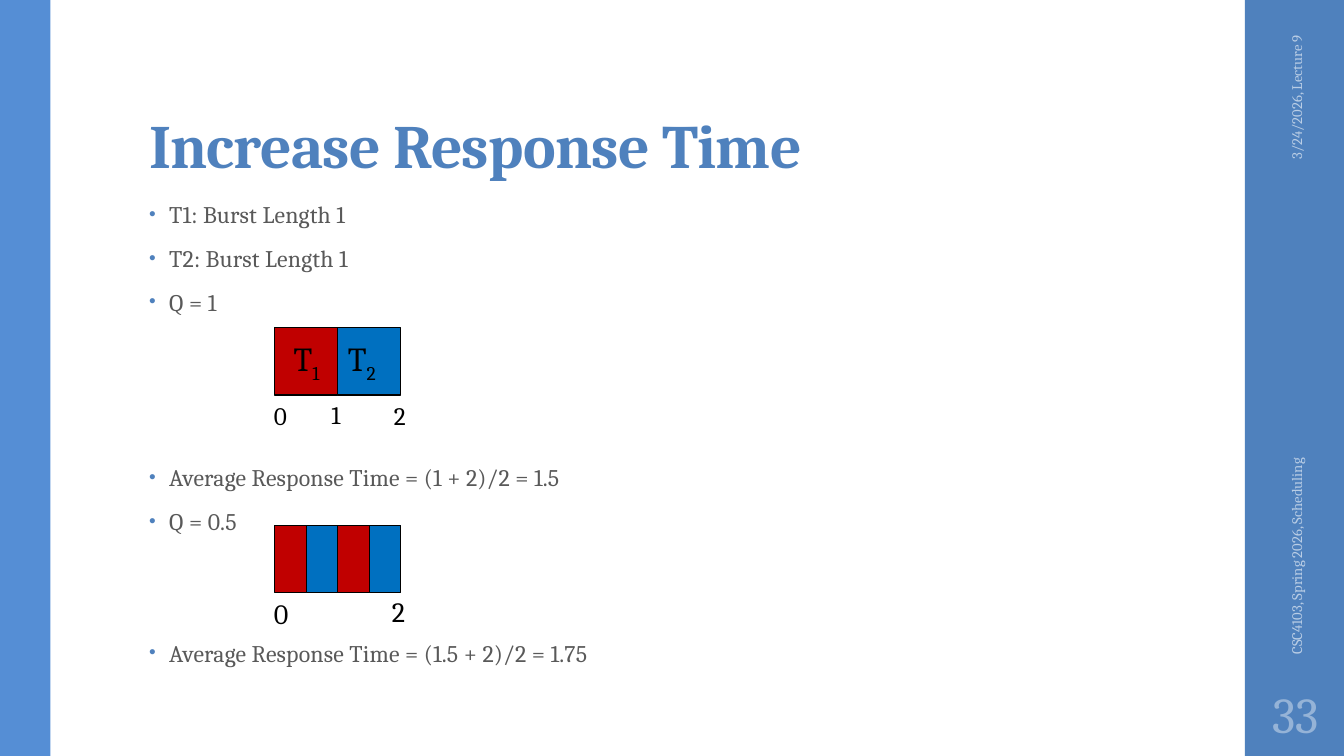
from lxml.etree import SubElement
from pptx import Presentation
from pptx.dml.color import RGBColor
from pptx.enum.shapes import MSO_SHAPE
from pptx.enum.text import MSO_ANCHOR, PP_ALIGN
from pptx.oxml.ns import qn
from pptx.util import Pt

COLORS = {
    "accent": "4F81BD", "stripe": "558ED5", "body": "595959", "footer": "B9CDE5",
    "number": "95B3D7", "red": "C00000", "blue": "0070C0", "black": "000000",
}
FONT = "Cambria"


def color(name):
    return RGBColor.from_string(COLORS[name])


def add_run(paragraph, text, size, color_name, bold=False, spacing=None, baseline=None):
    run = paragraph.add_run()
    run.text = text
    run.font.name = FONT
    run.font.size = Pt(size)
    run.font.bold = bold
    run.font.color.rgb = color(color_name)
    properties = run._r.get_or_add_rPr()
    if spacing is not None:
        properties.set("spc", str(round(spacing * 100)))
    if baseline is not None:
        properties.set("baseline", str(baseline * 1000))


def add_rectangle(shapes, box, fill, line=None):
    shape = shapes.add_shape(MSO_SHAPE.RECTANGLE, *map(Pt, box))
    shape.shadow.inherit = False
    shape.fill.solid()
    shape.fill.fore_color.rgb = color(fill)
    if line:
        shape.line.color.rgb = color(line)
        shape.line.width = Pt(0.75)
    else:
        shape.line.fill.background()
    return shape


def add_text_box(shapes, box, anchor=MSO_ANCHOR.MIDDLE, wrap=True):
    shape = shapes.add_textbox(*map(Pt, box))
    shape.text_frame.word_wrap = wrap
    shape.text_frame.vertical_anchor = anchor
    return shape


def add_bullet(paragraph):
    properties = paragraph._p.get_or_add_pPr()
    properties.set("marL", str(Pt(14.4)))
    properties.set("indent", str(-Pt(14.4)))
    bullet_color = SubElement(properties, qn("a:buClr"))
    SubElement(bullet_color, qn("a:srgbClr")).set("val", COLORS["accent"])
    SubElement(properties, qn("a:buSzPct")).set("val", "80000")
    SubElement(properties, qn("a:buFont")).set("typeface", "Arial")
    SubElement(properties, qn("a:buChar")).set("char", "•")


def add_title(slide, box, text):
    frame = add_text_box(slide.shapes, box, MSO_ANCHOR.BOTTOM).text_frame
    frame.margin_top = Pt(2.2)
    paragraph = frame.paragraphs[0]
    paragraph.line_spacing = 0.9
    add_run(paragraph, text, 44, "accent", bold=True, spacing=-0.5)


def add_body(slide, box, items):
    """Each item is its text and the space before it."""
    frame = add_text_box(slide.shapes, box, MSO_ANCHOR.TOP).text_frame
    for index, (text, space_before) in enumerate(items):
        paragraph = frame.add_paragraph() if index else frame.paragraphs[0]
        add_bullet(paragraph)
        paragraph.line_spacing = 0.75
        paragraph.space_before = Pt(space_before)
        paragraph.space_after = Pt(2)
        add_run(paragraph, text, 17, "body", spacing=0.1)


def add_sidebar(slide, box, date, course, number):
    left, top, width, height = box
    add_rectangle(slide.shapes, box, "accent")
    # Vertical footers, centred on the same line
    center = left + width / 2 + 36 - 35.3
    for text, middle, length, alignment in (
        (date, 92.9, 149.8, PP_ALIGN.RIGHT),
        (course, 333.4, 282.2, PP_ALIGN.LEFT),
    ):
        shape = add_text_box(slide.shapes, (center - length / 2, top + middle - 14.4, length, 28.8))
        shape.rotation = 270
        paragraph = shape.text_frame.paragraphs[0]
        paragraph.alignment = alignment
        add_run(paragraph, text, 10.5, "footer")
    # Slide number
    frame = add_text_box(slide.shapes, (left, top + height - 54, width, 46.8)).text_frame
    frame.margin_left = frame.margin_right = Pt(3.6)
    paragraph = frame.paragraphs[0]
    paragraph.alignment = PP_ALIGN.CENTER
    add_run(paragraph, number, 36, "number")


def add_timeline(slide, box, segments, ticks, tick_size):
    """Segments are fill, subscript and alignment; ticks are text, x and y offsets."""
    left, top, width, height = box
    shapes = slide.shapes.add_group_shape().shapes
    step = width / len(segments)
    for index, (fill, subscript, alignment) in enumerate(segments):
        shape = add_rectangle(shapes, (left + index * step, top, step, height), fill, "black")
        if subscript:
            frame = shape.text_frame
            frame.word_wrap = False
            frame.vertical_anchor = MSO_ANCHOR.MIDDLE
            paragraph = frame.paragraphs[0]
            paragraph.alignment = alignment
            add_run(paragraph, "T", 24, "black")
            add_run(paragraph, subscript, 24, "black", baseline=-25)
    for text, x, y in ticks:
        tick_box = (left + x, top + height + y, tick_size + 6.2, tick_size * 1.6)
        frame = add_text_box(shapes, tick_box, wrap=False).text_frame
        add_run(frame.paragraphs[0], text, tick_size, "black")


def build_slide(presentation):
    slide = presentation.slides.add_slide(presentation.slide_layouts[6])
    add_rectangle(slide.shapes, (0, 0, 36, 540), "stripe")
    add_sidebar(slide, (889.2, 0, 72, 540),
                "3/24/2026, Lecture 9", "CSC4103, Spring 2026, Scheduling", "33")
    add_title(slide, (99.4, 23, 763.2, 110.2), "Increase Response Time")
    # Wider gaps leave room for the timelines
    add_body(slide, (99.4, 144, 676.8, 342.7), [
        ("T1: Burst Length 1", 0),
        ("T2: Burst Length 1", 14),
        ("Q = 1", 14),
        ("Average Response Time = (1 + 2)/2 = 1.5", 108),
        ("Q = 0.5", 14),
        ("Average Response Time = (1.5 + 2)/2 = 1.75", 76.6),
    ])
    add_timeline(slide, (196.4, 234, 90, 48.2),
                 [("red", "1", PP_ALIGN.CENTER), ("blue", "2", PP_ALIGN.LEFT)],
                 [("0", -7.8, 0), ("1", 33.3, -0.7), ("2", 77.9, 0)], 18)
    add_timeline(slide, (196.4, 375.1, 90, 48.2),
                 [("red", None, None), ("blue", None, None)] * 2,
                 [("0", -7.8, -1.4), ("2", 76.5, -2.8)], 20)


def main():
    presentation = Presentation()
    presentation.slide_width = Pt(960)
    presentation.slide_height = Pt(540)
    build_slide(presentation)
    presentation.save("out.pptx")


if __name__ == "__main__":
    main()
